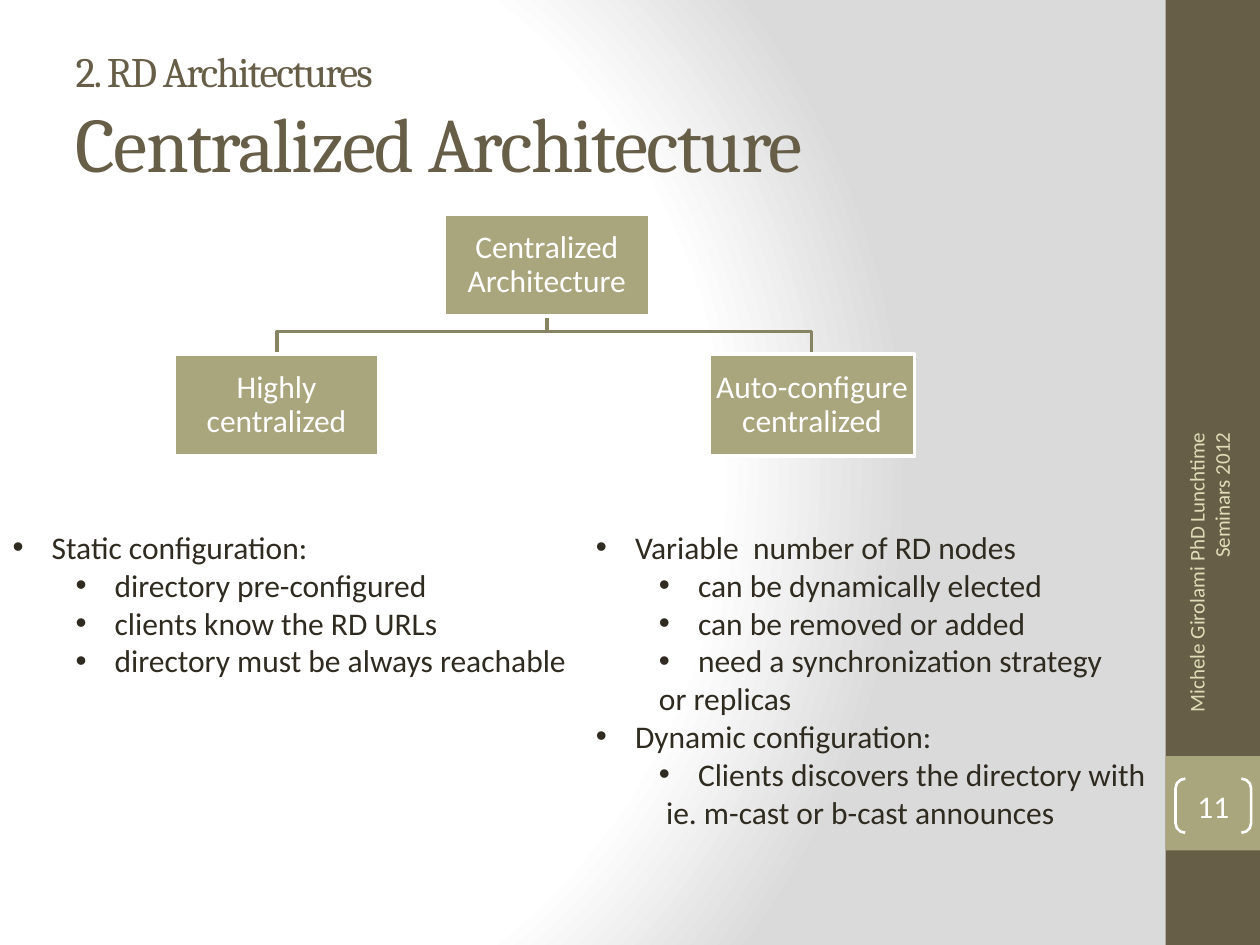
from pptx import Presentation
from pptx.dml.color import RGBColor
from pptx.enum import shapes, text
from pptx.oxml import parse_xml
from pptx.oxml.ns import nsdecls, qn
from pptx import util as u

PX = 9144
BROWN = RGBColor(0x67, 0x5E, 0x47)
OLIVE = RGBColor(0xA9, 0xA5, 0x7C)
BRANCH = RGBColor(0x87, 0x84, 0x63)
CREAM = RGBColor(0xDF, 0xDC, 0xB7)
INK = RGBColor(0x2F, 0x2B, 0x20)
WHITE = RGBColor(0xFF, 0xFF, 0xFF)
MIST = RGBColor(0xDA, 0xDA, 0xDA)

PARENT = "Centralized Architecture"
CHILDREN = ["Highly centralized", "Auto-configure centralized"]
STATIC = [
    ("head", "Static configuration:"),
    ("item", "directory pre-configured"),
    ("item", "clients know the RD URLs"),
    ("item", "directory must be always reachable"),
]
DYNAMIC = [
    ("head", "Variable  number of RD nodes"),
    ("item", "can be dynamically elected"),
    ("item", "can be removed or added"),
    ("item", "need a synchronization strategy"),
    ("rest", "or replicas"),
    ("head", "Dynamic configuration:"),
    ("item", "Clients discovers the directory with"),
    ("rest", " ie. m-cast or b-cast announces"),
]
LEVELS = {"head": (0, 31, -31), "item": (1, 81, -31), "rest": (1, 50, 0)}


def emu(*lengths):
    """Turn px lengths into EMU."""
    return [u.Emu(round(length * PX)) for length in lengths]


def apply(target, **values):
    """Set each named attribute on the target."""
    for name, value in values.items():
        setattr(target, name, value)


def place(shape, box):
    """Move a shape to its box."""
    apply(shape, **dict(zip(("left", "top", "width", "height"), emu(*box))))


def set_frame(frame, inset=None, anchor=text.MSO_ANCHOR.MIDDLE):
    """Fix wrapping, anchor and insets of a text frame."""
    apply(frame, word_wrap=True, auto_size=text.MSO_AUTO_SIZE.NONE,
          vertical_anchor=anchor)
    if inset is not None:
        sides = ("margin_left", "margin_top", "margin_right", "margin_bottom")
        apply(frame, **dict.fromkeys(sides, emu(inset)[0]))


def add_span(para, words, size, color, font="Calibri"):
    """Add a formatted run to a paragraph."""
    span = para.add_run()
    span.text = words
    apply(span.font, name=font, size=u.Pt(size))
    span.font.color.rgb = color
    return span


def add_shape(page, kind, box, fill=None, line=None, weight=2):
    """Add a preset shape without shadow."""
    shape = page.shapes.add_shape(kind, *emu(*box))
    paint(shape, fill, line, weight)
    return shape


def paint(shape, fill, line, weight):
    """Set fill and outline, leaving out what is None."""
    shape.shadow.inherit = False
    for part, color in ((shape.fill, fill), (shape.line.fill, line)):
        if color is None:
            part.background()
        else:
            part.solid()
            part.fore_color.rgb = color
    if line is not None:
        shape.line.width = u.Pt(weight)


def set_background(page):
    """Fill the page with a circular gradient."""
    page.background.fill.gradient()
    gradient = page.element.find(".//" + qn("a:gradFill"))
    stops = "".join(
        f'<a:gs pos="{share * 1000}"><a:srgbClr val="{color}"/></a:gs>'
        for share, color in ((0, WHITE), (75, WHITE), (100, MIST)))
    gradient.getparent().replace(gradient, parse_xml(
        f'<a:gradFill {nsdecls("a")} rotWithShape="1"><a:gsLst>{stops}</a:gsLst>'
        '<a:path path="circle"><a:fillToRect l="20000" t="50000" r="100000"'
        ' b="50000"/></a:path></a:gradFill>'))


def add_sidebar(page, box):
    """Draw the side band with footer and page number."""
    left, top, width, height = box
    rect = shapes.MSO_SHAPE.RECTANGLE
    add_shape(page, rect, box, BROWN)
    add_shape(page, rect, (left, top + 600, width, width), OLIVE)

    footer = page.shapes.add_textbox(*emu(left - 95, top + 443, 259, 40))
    footer.rotation = 270
    set_frame(footer.text_frame)
    para = footer.text_frame.paragraphs[0]
    para.alignment = text.PP_ALIGN.RIGHT
    add_span(para, "Michele Girolami PhD Lunchtime Seminars 2012", 12, CREAM)

    number = add_shape(page, shapes.MSO_SHAPE.DOUBLE_BRACKET,
                       (left + 8, top + 618, 60, 43), line=WHITE, weight=1.5)
    number.adjustments[0] = 0.18
    set_frame(number.text_frame, 0)
    para = number.text_frame.paragraphs[0]
    para.alignment = text.PP_ALIGN.CENTER
    add_span(para, "11", 18, WHITE)


def fill_title(title, box):
    """Write the two-line heading."""
    place(title, box)
    set_frame(title.text_frame)
    para = title.text_frame.paragraphs[0]
    para.alignment = text.PP_ALIGN.LEFT
    section = add_span(para, "2. RD Architectures", 24, BROWN, "Cambria")
    para.add_line_break()
    topic = add_span(para, "Centralized Architecture", 44, BROWN, "Cambria")
    for span in (section, topic):
        span.font._element.set("spc", "-100")


def add_node(page, box, words):
    """Draw one labelled box of the tree."""
    node = add_shape(page, shapes.MSO_SHAPE.RECTANGLE, box, OLIVE, WHITE)
    set_frame(node.text_frame, 1)
    para = node.text_frame.paragraphs[0]
    apply(para, alignment=text.PP_ALIGN.CENTER, line_spacing=0.9)
    add_span(para, words, 18, WHITE)


def add_tree(page, box):
    """Draw the parent, its children and the branches between them."""
    left, top, width, height = box
    node_w, node_h = 163, 81
    root_x, start = left + 296, top + node_h + 1
    child_top = top + height - node_h
    child_lefts = (left, left + width - node_w)
    for child_left in reversed(child_lefts):
        child_x = child_left + node_w / 2
        path = page.shapes.build_freeform(root_x, start, scale=PX)
        path.add_line_segments([(root_x, start + 11), (child_x, start + 11),
                                (child_x, child_top)], close=False)
        paint(path.convert_to_shape(), None, BRANCH, 2)
    add_node(page, (root_x - node_w / 2, top, node_w, node_h), PARENT)
    for child_left, words in zip(child_lefts, CHILDREN):
        add_node(page, (child_left, child_top, node_w, node_h), words)


def fill_list(body, box, entries):
    """Write a two-level bulleted list."""
    place(body, box)
    frame = body.text_frame
    set_frame(frame, anchor=text.MSO_ANCHOR.TOP)
    for index, (kind, words) in enumerate(entries):
        para = frame.add_paragraph() if index else frame.paragraphs[0]
        level, margin, indent = LEVELS[kind]
        apply(para, level=level, space_before=u.Pt(0),
              alignment=text.PP_ALIGN.LEFT)
        props = para._p.get_or_add_pPr()
        for name, length in (("marL", margin), ("indent", indent)):
            props.set(name, str(length * PX))
        if kind == "rest":
            marks = ["<a:buNone %s/>"]
        else:
            marks = ['<a:buFont %s typeface="Arial"/>', '<a:buChar %s char="•"/>']
        for mark in marks:
            props.append(parse_xml(mark % nsdecls("a")))
        add_span(para, words, 18, INK)


def main():
    """Build the deck and save it."""
    deck = Presentation()
    deck.slide_width, deck.slide_height = emu(1000, 750)
    page = deck.slides.add_slide(deck.slide_layouts[3])
    title, static, dynamic = page.placeholders
    set_background(page)
    add_sidebar(page, (925, 0, 75, 750))
    fill_title(title, (50, 30, 833, 125))
    add_tree(page, (138, 170, 588, 192))
    fill_list(static, (0, 414, 465, 192), STATIC)
    fill_list(dynamic, (463, 414, 472, 313), DYNAMIC)
    deck.save("out.pptx")


if __name__ == "__main__":
    main()
